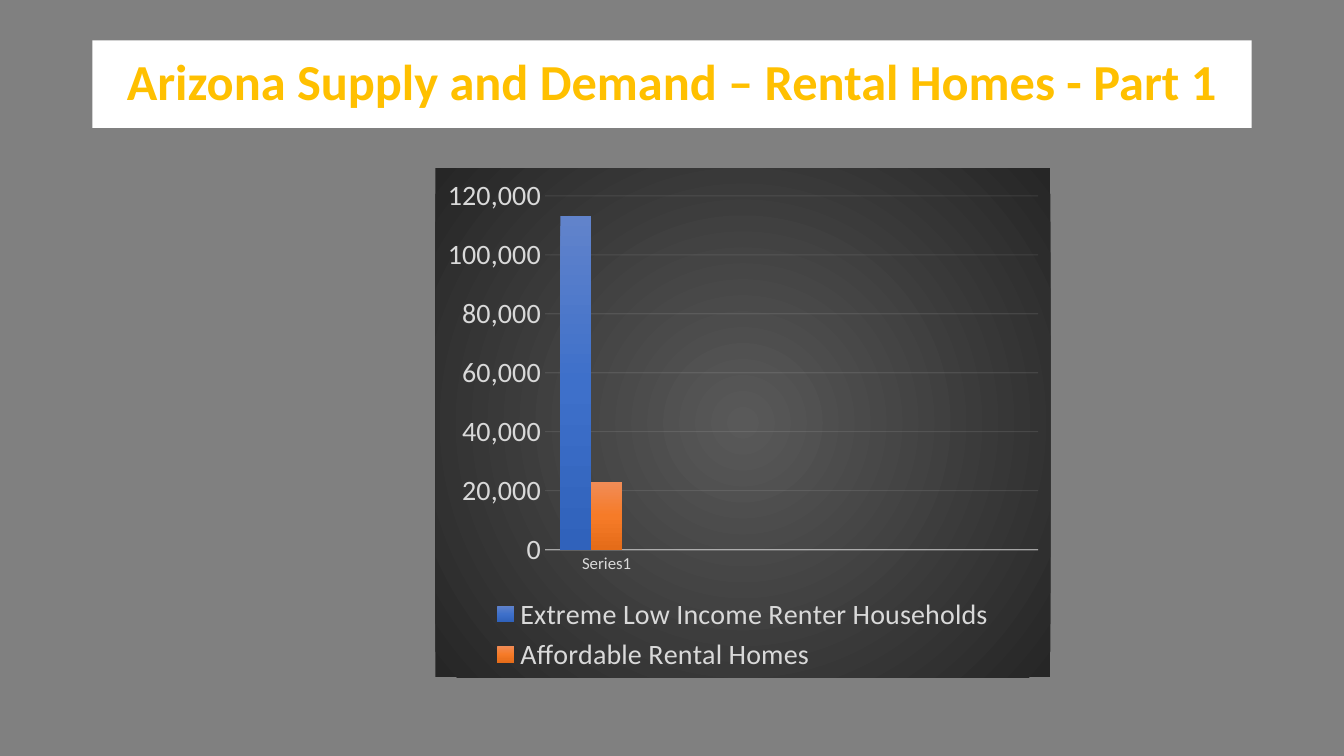
from dataclasses import dataclass

from lxml import etree
from pptx import Presentation
from pptx.chart.data import CategoryChartData
from pptx.dml.color import RGBColor
from pptx.enum.chart import XL_CHART_TYPE, XL_LEGEND_POSITION, XL_TICK_MARK
from pptx.enum.text import MSO_ANCHOR, MSO_AUTO_SIZE, PP_ALIGN
from pptx.oxml import parse_xml
from pptx.oxml.ns import nsdecls, qn
from pptx.util import Inches, Pt

COLUMNS = XL_CHART_TYPE.COLUMN_CLUSTERED
BOTTOM = XL_LEGEND_POSITION.BOTTOM
NO_TICK = XL_TICK_MARK.NONE
MIDDLE = MSO_ANCHOR.MIDDLE
FIXED_SIZE = MSO_AUTO_SIZE.NONE
CENTER = PP_ALIGN.CENTER
TITLE_ONLY = 5
SLIDE_WIDTH, SLIDE_HEIGHT = Inches(13.33), Inches(7.5)


@dataclass(frozen=True)
class Theme:
    font: str = "Calibri"
    backdrop: str = "808080"
    banner: str = "FFFFFF"
    title: str = "FFC000"
    label: str = "D9D9D9"
    rule: str = "F2F2F2"
    panel: tuple[str, ...] = ("595959", "262626")
    title_size: int = 36
    chart_size: int = 20
    category_size: int = 12


@dataclass(frozen=True)
class Area:
    """A rectangle in percent of the slide's width and height."""
    left: float
    top: float
    width: float
    height: float

    def lengths(self) -> tuple[int, int, int, int]:
        return (int(SLIDE_WIDTH * self.left / 100), int(SLIDE_HEIGHT * self.top / 100),
                int(SLIDE_WIDTH * self.width / 100), int(SLIDE_HEIGHT * self.height / 100))


@dataclass(frozen=True)
class ColumnSeries:
    name: str
    values: tuple
    shades: tuple[str, ...]


THEME = Theme()
TITLE_AREA = Area(6.88, 5.33, 86.25, 11.6)
CHART_AREA = Area(32.4, 22.27, 45.76, 67.33)
CATEGORIES = ("Series1", "", "", "")
EMPTY = (None,) * 3
SERIES = (
    ColumnSeries("Extreme Low Income Renter Households", (113000, *EMPTY),
                 ("6183CB", "3E70CA", "3062BB")),
    ColumnSeries("Affordable Rental Homes ", (23000, *EMPTY),
                 ("F18C57", "F67B28", "E56C19")),
    ColumnSeries("Series 3", (None, *EMPTY), ("AFAFAF", "A5A5A5", "939393")),
)
UNLISTED_SERIES = 2
DOWNWARD = '<a:lin ang="5400000" scaled="0"/>'
OUTWARD = ('<a:path path="circle"><a:fillToRect l="50000" t="50000" '
           'r="50000" b="50000"/></a:path>')


def gradient_fill(shades: tuple[str, ...], direction: str) -> etree.ElementBase:
    step = 100000 // (len(shades) - 1)
    stops = "".join(f'<a:gs pos="{index * step}"><a:srgbClr val="{shade}"/></a:gs>'
                    for index, shade in enumerate(shades))
    return parse_xml(f'<a:gradFill {nsdecls("a")} rotWithShape="1">'
                     f'<a:gsLst>{stops}</a:gsLst>{direction}</a:gradFill>')


def style_font(font, size: int, color: str) -> None:
    font.name = THEME.font
    font.size = Pt(size)
    font.color.rgb = RGBColor.from_string(color)


def style_line(line, width: float, opacity: int) -> None:
    line.width = Pt(width)
    line.color.rgb = RGBColor.from_string(THEME.rule)
    color = next(line.fill._xPr.iter(qn("a:srgbClr")))
    etree.SubElement(color, qn("a:alpha")).set("val", str(opacity * 1000))


def add_title(page, text: str) -> None:
    box = page.shapes.title
    box.left, box.top, box.width, box.height = TITLE_AREA.lengths()
    box.fill.solid()
    box.fill.fore_color.rgb = RGBColor.from_string(THEME.banner)
    frame = box.text_frame
    frame.text = text
    frame.word_wrap = True
    frame.auto_size = FIXED_SIZE
    frame.vertical_anchor = MIDDLE
    para = frame.paragraphs[0]
    para.alignment = CENTER
    para.line_spacing = 0.9
    span = para.runs[0]
    style_font(span.font, THEME.title_size, THEME.title)
    span.font.bold = True


def style_axes(chart) -> None:
    category_axis, value_axis = chart.category_axis, chart.value_axis
    for axis, size in ((category_axis, THEME.category_size), (value_axis, THEME.chart_size)):
        axis.major_tick_mark = axis.minor_tick_mark = NO_TICK
        style_font(axis.tick_labels.font, size, THEME.label)
    style_line(category_axis.format.line, 1, 54)
    value_axis.minimum_scale, value_axis.maximum_scale = 0, 120000
    value_axis.major_unit = 20000
    value_axis.tick_labels.number_format = "#,##0"
    value_axis.tick_labels.number_format_is_linked = False
    value_axis.format.line.fill.background()
    style_line(value_axis.major_gridlines.format.line, 0.75, 10)


def style_legend(chart) -> None:
    chart.has_legend = True
    chart.legend.position = BOTTOM
    chart.legend.include_in_layout = False
    style_font(chart.legend.font, THEME.chart_size, THEME.label)
    position = next(chart._chartSpace.iter(qn("c:legendPos")))
    position.addnext(parse_xml(
        f'<c:legendEntry {nsdecls("c")}><c:idx val="{UNLISTED_SERIES}"/>'
        '<c:delete val="1"/></c:legendEntry>'))


def add_rental_chart(page) -> None:
    data = CategoryChartData(number_format="#,##0")
    data.categories = CATEGORIES
    for series in SERIES:
        data.add_series(series.name, series.values)
    chart = page.shapes.add_chart(COLUMNS, *CHART_AREA.lengths(), data).chart
    chart.has_title = False
    style_font(chart.font, THEME.chart_size, THEME.label)
    plot = chart.plots[0]
    plot.gap_width, plot.overlap = 100, 0
    plot.vary_by_categories = False
    style_axes(chart)
    style_legend(chart)

    # Column gradients
    for column, series in zip(plot.series, SERIES):
        column.format.fill.solid()
        solid = next(column.format.fill._xPr.iter(qn("a:solidFill")))
        solid.getparent().replace(solid, gradient_fill(series.shades, DOWNWARD))

    # Dark panel behind the chart
    panel = parse_xml(f'<c:spPr {nsdecls("c", "a")}><a:ln><a:noFill/></a:ln></c:spPr>')
    panel.insert(0, gradient_fill(THEME.panel, OUTWARD))
    chart._chartSpace.find(qn("c:chart")).addnext(panel)


def main() -> None:
    deck = Presentation()
    deck.slide_width, deck.slide_height = SLIDE_WIDTH, SLIDE_HEIGHT
    page = deck.slides.add_slide(deck.slide_layouts[TITLE_ONLY])
    page.background.fill.solid()
    page.background.fill.fore_color.rgb = RGBColor.from_string(THEME.backdrop)
    add_title(page, "Arizona Supply and Demand – Rental Homes - Part 1")
    add_rental_chart(page)
    deck.save("out.pptx")


if __name__ == "__main__":
    main()
